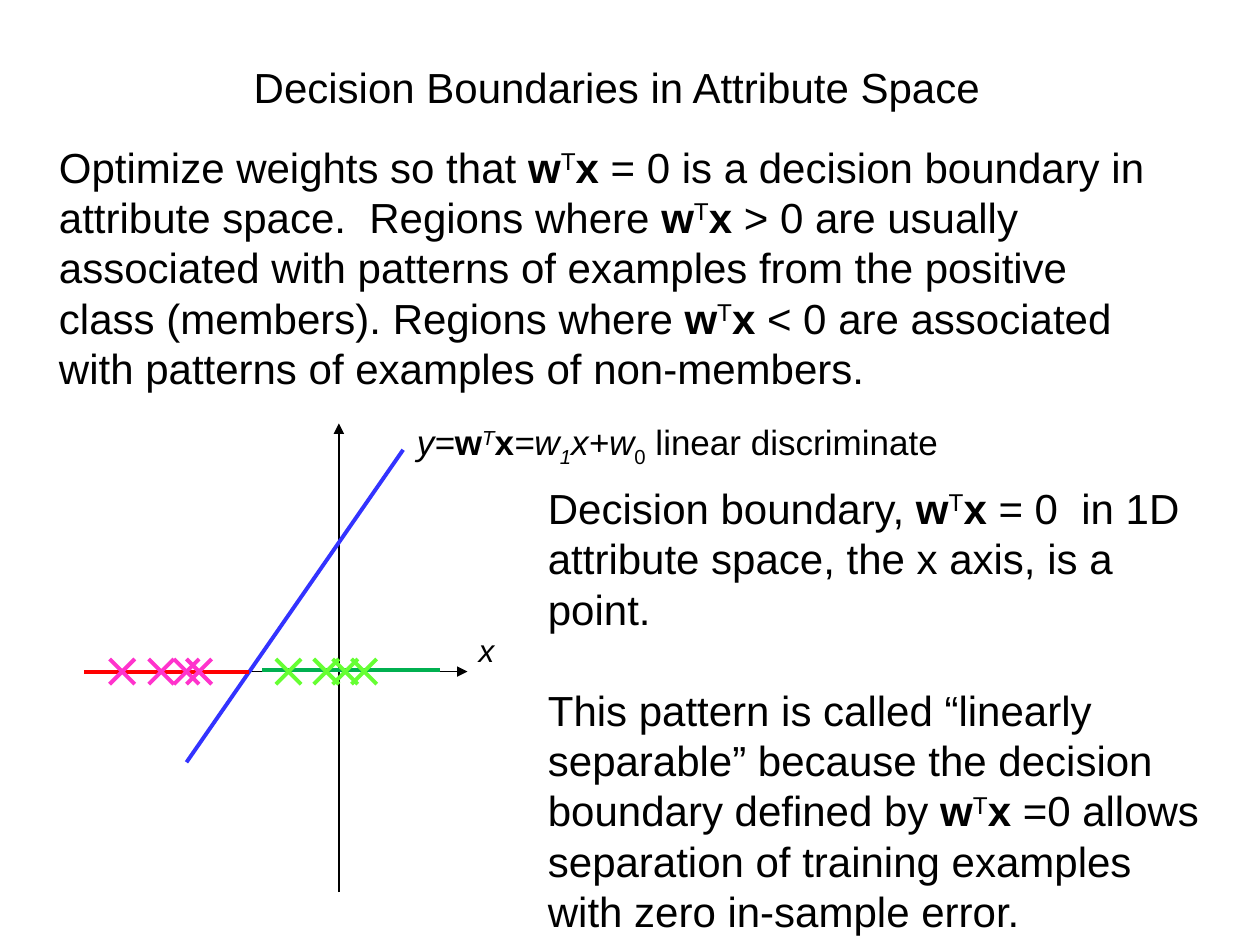
from lxml.etree import SubElement
from pptx import Presentation
from pptx.dml.color import RGBColor
from pptx.enum.shapes import MSO_CONNECTOR
from pptx.enum.text import MSO_AUTO_SIZE, PP_ALIGN
from pptx.oxml.ns import qn
from pptx.util import Inches, Pt

FONT = "Arial"
BLACK, BLUE, RED, GREEN = "000000", "3333FF", "FF0000", "00B050"
MEMBER, NON_MEMBER = "66FF33", "FF33CC"

# A run is (text, style); style letters: b bold, i italic, ^ superscript, _ subscript
W_T_X = [("w", "b"), ("T", "^"), ("x", "b")]
BASELINES = {"^": "30000", "_": "-25000"}


def color(hex_string):
    return RGBColor.from_string(hex_string)


def add_run(paragraph, text, style, size):
    run = paragraph.add_run()
    run.text = text
    font = run.font
    font.name, font.size = FONT, Pt(size)
    font.color.rgb = color(BLACK)
    font.bold, font.italic = "b" in style, "i" in style
    for mark, baseline in BASELINES.items():
        if mark in style:
            font._element.set("baseline", baseline)


def add_text(shapes, box, paragraphs, size, wrap=True, align=PP_ALIGN.LEFT, gap=0):
    """Write paragraphs, each a list of runs, with gap points between them."""
    frame = shapes.add_textbox(*map(Inches, box)).text_frame
    frame.word_wrap = wrap
    frame.auto_size = MSO_AUTO_SIZE.SHAPE_TO_FIT_TEXT
    for index, runs in enumerate(paragraphs):
        paragraph = frame.add_paragraph() if index else frame.paragraphs[0]
        paragraph.alignment = align
        if index:
            paragraph.space_before = Pt(gap)
        for text, style in runs:
            add_run(paragraph, text, style, size)


def add_line(shapes, start, end, hex_color, width=2.25, arrow=False):
    line = shapes.add_connector(MSO_CONNECTOR.STRAIGHT, *map(Inches, (*start, *end)))
    line.line.color.rgb = color(hex_color)
    line.line.width = Pt(width)
    if arrow:
        SubElement(line.line._get_or_add_ln(), qn("a:tailEnd"), type="triangle")
    SubElement(line._element.spPr, qn("a:effectLst"))


def add_cross(shapes, x, y, hex_color, radius=0.1):
    for rise in (radius, -radius):
        add_line(shapes, (x - radius, y - rise), (x + radius, y + rise), hex_color)


def add_title(slide, box):
    runs = [("Decision Boundaries in Attribute Space", "")]
    add_text(slide.shapes, box, [runs], 24, wrap=False, align=PP_ALIGN.CENTER)


def add_introduction(slide, box):
    runs = [
        ("Optimize weights so that ", ""), *W_T_X,
        (" = 0 is a decision boundary in attribute space.  Regions where ", ""), *W_T_X,
        (" > 0 are usually associated with patterns of examples from the "
         "positive class (members). Regions where ", ""), *W_T_X,
        (" < 0 are associated with patterns of examples of non-members.", ""),
    ]
    add_text(slide.shapes, box, [runs], 24)


def add_discriminant_plot(slide, box):
    """Draw the line y(x) over the x axis, with the examples of both classes."""
    left, top, width, height = box
    shapes = slide.shapes.add_group_shape().shapes
    axis_y = top + 1.97
    origin_x = left + 2.02

    add_line(shapes, (left + 1.01, axis_y), (left + 3.04, axis_y), BLACK, 0.75, True)
    add_line(shapes, (origin_x, top + height), (origin_x, top), BLACK, 0.75, True)
    add_line(shapes, (left + 0.81, top + 2.69), (left + 2.53, top + 0.21), BLUE)
    add_line(shapes, (left + 1.41, axis_y - 0.01), (left + 2.82, axis_y - 0.01), GREEN)
    add_line(shapes, (left, axis_y), (left + 1.31, axis_y), RED)

    examples = {MEMBER: (2.22, 1.62, 1.92, 2.07), NON_MEMBER: (0.91, 0.3, 0.61, 0.81)}
    for hex_color, offsets in examples.items():
        for offset in offsets:
            add_cross(shapes, left + offset, axis_y, hex_color)

    label_box = (left + width - 0.38, top + 1.6, 0.38, 0.56)
    add_text(shapes, label_box, [[("x", "i")]], 18, wrap=False)


def add_explanation(slide, box):
    boundary = [
        ("Decision boundary, ", ""), *W_T_X,
        (" = 0  in 1D attribute space, the x axis, is a point.", ""),
    ]
    separability = [
        ("This pattern is called “linearly separable” because the decision "
         "boundary defined by ", ""), *W_T_X,
        (" =0 allows separation of training examples with zero in-sample error.", ""),
    ]
    add_text(slide.shapes, box, [boundary, separability], 24, gap=28.8)


def add_equation(slide, box):
    runs = [
        ("y=", "i"), ("w", "b"), ("T", "i^"), ("x", "b"), ("=w", "i"), ("1", "i_"),
        ("x+w", "i"), ("0", "_"), (" linear discriminate", ""),
    ]
    add_text(slide.shapes, box, [runs], 20, wrap=False)


def main():
    presentation = Presentation()
    presentation.slide_width, presentation.slide_height = Inches(10), Inches(7.5)
    slide = presentation.slides.add_slide(presentation.slide_layouts[6])
    add_title(slide, (1.88, 0.44, 6.03, 0.5))
    add_introduction(slide, (0.37, 1.07, 9.04, 2.12))
    add_discriminant_plot(slide, (0.67, 3.36, 3.41, 3.72))
    add_explanation(slide, (4.25, 3.78, 5.42, 3.74))
    add_equation(slide, (3.21, 3.29, 4.46, 0.44))
    presentation.save("out.pptx")


if __name__ == "__main__":
    main()
